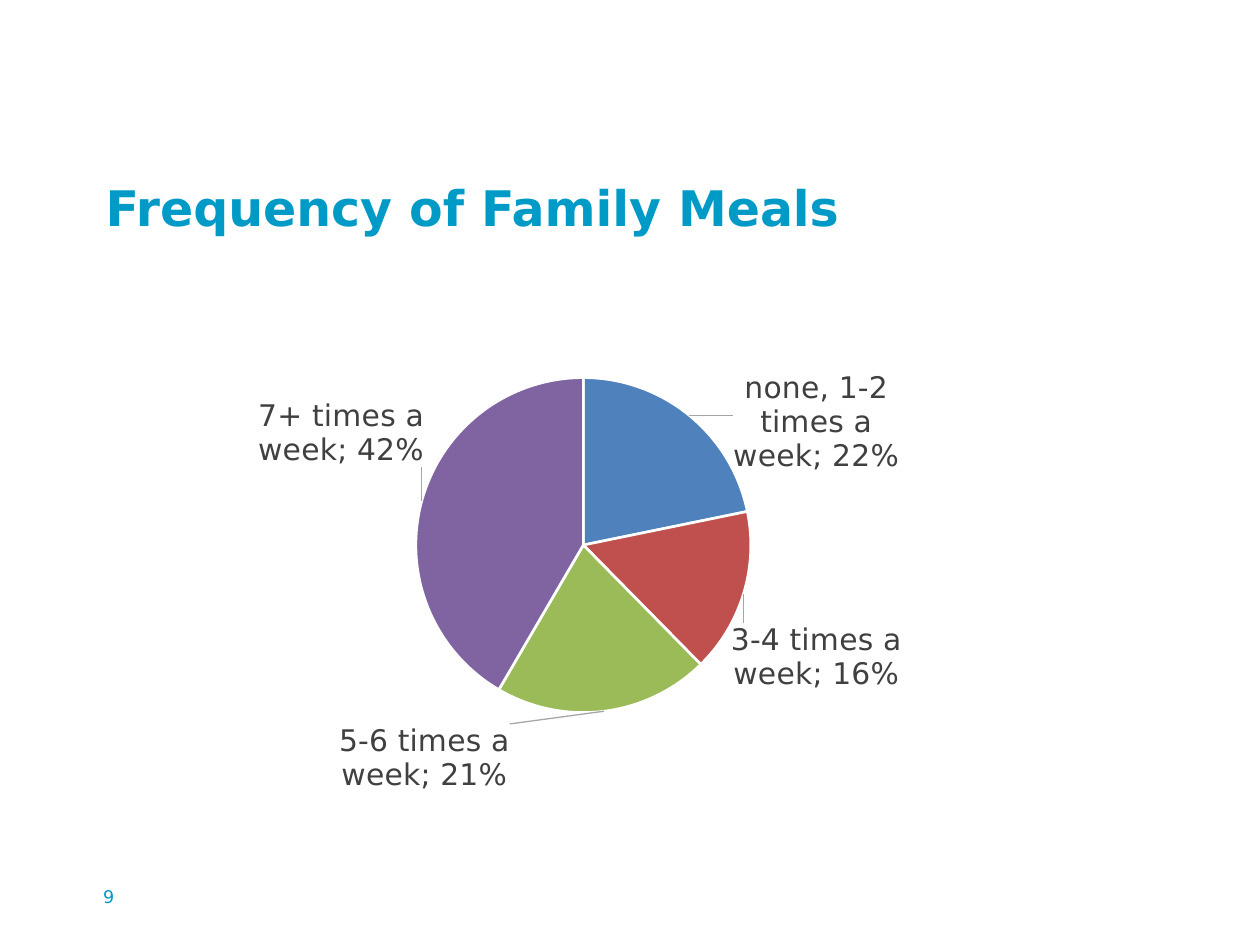
from lxml.etree import SubElement
from pptx import Presentation
from pptx.chart.data import CategoryChartData
from pptx.dml.color import RGBColor
from pptx.enum.chart import XL_CHART_TYPE, XL_LABEL_POSITION
from pptx.oxml import parse_xml
from pptx.oxml.ns import nsdecls, qn
from pptx.util import Inches, Pt

FONT = "DejaVu Sans"
ACCENT = "009AC7"
LABEL_COLOR = "404040"
MEALS = [
    ("none, 1-2 times a week", 0.22, "4F81BD", (0.04, 0.12)),
    ("3-4 times a week", 0.16, "C0504D", (-0.02, 0.05)),
    ("5-6 times a week", 0.21, "9BBB59", (-0.27, 0.01)),
    ("7+ times a week", 0.42, "8064A2", (0.01, -0.06)),
]


def color(hex_value):
    return RGBColor.from_string(hex_value)


def style_font(font, size, hex_value, bold=False):
    font.name = FONT
    font.size = Pt(size)
    font.bold = bold
    font.color.rgb = color(hex_value)


def add_text(slide, left, top, width, height, text, size, bold=False):
    box = slide.shapes.add_textbox(
        Inches(left), Inches(top), Inches(width), Inches(height))
    box.text_frame.word_wrap = True
    run = box.text_frame.paragraphs[0].add_run()
    run.text = text
    style_font(run.font, size, ACCENT, bold)


def manual_layout(**values):
    layout = parse_xml(f"<c:layout {nsdecls('c')}><c:manualLayout/></c:layout>")
    for name, value in values.items():
        SubElement(layout[0], qn(f"c:{name}")).set("val", str(value))
    return layout


def set_plot_area(chart, left, top, width, height):
    plot_area = chart.plots[0]._element.getparent()
    for layout in plot_area.findall(qn("c:layout")):
        plot_area.remove(layout)
    plot_area.insert(0, manual_layout(
        layoutTarget="inner", xMode="edge", yMode="edge",
        x=left, y=top, w=width, h=height))


def add_separator(element):
    separator = parse_xml(f"<c:separator {nsdecls('c')}>; </c:separator>")
    element.find(qn("c:showBubbleSize")).addnext(separator)


def style_series_labels(series):
    labels = series.data_labels
    labels.show_value = True
    labels.show_category_name = True
    labels.show_percentage = False
    labels.number_format = "0%"
    labels.number_format_is_linked = False
    labels.position = XL_LABEL_POSITION.OUTSIDE_END
    style_font(labels.font, 17, LABEL_COLOR)
    element = labels._element
    add_separator(element)
    for leader in element.findall(qn("c:showLeaderLines")):
        element.remove(leader)
    SubElement(element, qn("c:showLeaderLines")).set("val", "1")
    element.append(parse_xml(
        f'<c:leaderLines {nsdecls("c", "a")}><c:spPr><a:ln w="9525">'
        '<a:solidFill><a:srgbClr val="A6A6A6"/></a:solidFill>'
        '</a:ln></c:spPr></c:leaderLines>'))


def style_slice(series, index, fill, offset):
    point = series.points[index]
    point.format.fill.solid()
    point.format.fill.fore_color.rgb = color(fill)
    point.format.line.color.rgb = color("FFFFFF")
    point.format.line.width = Pt(1.5)
    label = point.data_label
    style_font(label.font, 17, LABEL_COLOR)
    label.position = XL_LABEL_POSITION.OUTSIDE_END
    element = series.data_labels._element.findall(qn("c:dLbl"))[index]
    element.find(qn("c:showCatName")).set("val", "1")
    layout = manual_layout(x=offset[0], y=offset[1])
    element.find(qn("c:idx")).addnext(layout)
    layout.addnext(parse_xml(
        f'<c:numFmt {nsdecls("c")} formatCode="0%" sourceLinked="0"/>'))
    add_separator(element)


def add_meals_chart(slide):
    data = CategoryChartData(number_format="0%")
    data.categories = [name for name, *_ in MEALS]
    data.add_series("Series 1", [value for _, value, *_ in MEALS])
    chart = slide.shapes.add_chart(
        XL_CHART_TYPE.PIE, Inches(0.72), Inches(2.17),
        Inches(7.82), Inches(4.23), data).chart
    chart.has_title = False
    chart.has_legend = False
    style_font(chart.font, 17, "000000")
    chart.plots[0].vary_by_categories = True
    set_plot_area(chart, 0.33, 0.19, 0.34, 0.64)
    series = chart.plots[0].series[0]
    style_series_labels(series)
    for index, (_, _, fill, offset) in enumerate(MEALS):
        style_slice(series, index, fill, offset)


def main():
    presentation = Presentation()
    presentation.slide_width = Inches(10)
    presentation.slide_height = Inches(7.5)
    slide = presentation.slides.add_slide(presentation.slide_layouts[6])
    add_text(slide, 0.72, 6.98, 0.7, 0.52, "9", 10)
    add_text(slide, 0.74, 1.36, 7.82, 1.29, "Frequency of Family Meals", 28, True)
    add_meals_chart(slide)
    presentation.save("out.pptx")


if __name__ == "__main__":
    main()
